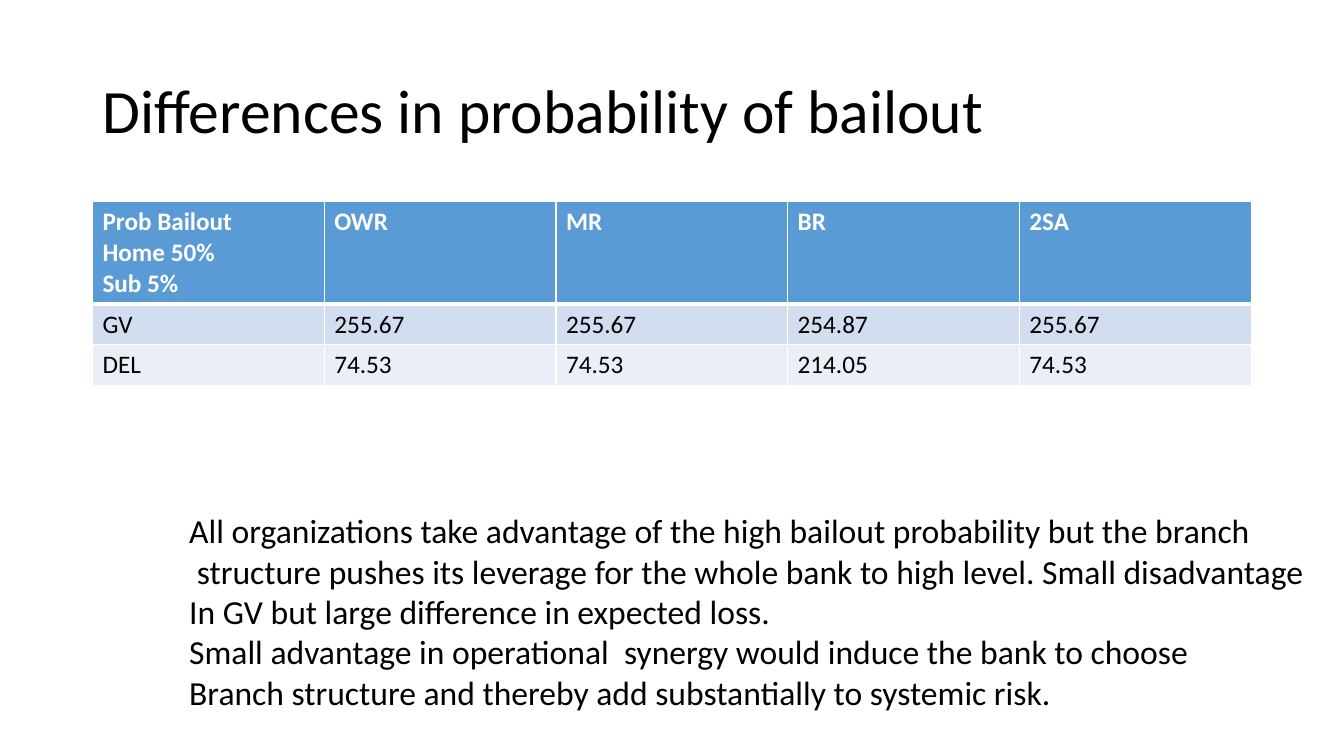
from dataclasses import dataclass

from pptx import Presentation
from pptx import util as u
from pptx.dml import color
from pptx.enum import text
from pptx.oxml import ns, xmlchemy


@dataclass(frozen=True)
class Theme:
    font: str = "Calibri"
    black: str = "000000"
    white: str = "FFFFFF"
    header: str = "5B9BD5"
    bands: tuple = ("D2DEEF", "EAEFF7")
    title_size: int = 44
    table_size: int = 18
    note_size: int = 24


theme = Theme()


def write_lines(tf, lines, size, rgb, bold=False):
    for i, line in enumerate(lines):
        p = tf.paragraphs[0] if i == 0 else tf.add_paragraph()
        p.alignment = text.PP_ALIGN.LEFT
        r = p.add_run()
        r.text = line
        r.font.name = theme.font
        r.font.size = u.Pt(size)
        r.font.bold = bold
        r.font.color.rgb = color.RGBColor.from_string(rgb)


def add_border(cell, side, width):
    tc_pr = cell._tc.get_or_add_tcPr()
    ln = xmlchemy.OxmlElement(f"a:ln{side}")
    ln.set("w", str(u.Pt(width)))
    fill = xmlchemy.OxmlElement("a:solidFill")
    rgb = xmlchemy.OxmlElement("a:srgbClr")
    rgb.set("val", theme.white)
    fill.append(rgb)
    ln.append(fill)
    tc_pr.append(ln)


prs = Presentation()
prs.slide_width, prs.slide_height = u.Cm(33.87), u.Cm(19.05)
s = prs.slides.add_slide(prs.slide_layouts[5])

title = s.shapes.title
title.left, title.top = u.Cm(2.33), u.Cm(1.01)
title.width, title.height = u.Cm(29.21), u.Cm(3.68)
tf = title.text_frame
tf.auto_size = text.MSO_AUTO_SIZE.NONE
tf.vertical_anchor = text.MSO_ANCHOR.MIDDLE
write_lines(tf, ["Differences in probability of bailout"], theme.title_size, theme.black)
tf.paragraphs[0].line_spacing = 0.9

rows = [
    ["Prob Bailout\nHome 50%\nSub 5%", "OWR", "MR", "BR", "2SA"],
    ["GV", "255.67", "255.67", "254.87", "255.67"],
    ["DEL", "74.53", "74.53", "214.05", "74.53"],
]
row_heights = [2.54, 1.03, 1.03]
row_fills = [theme.header, *theme.bands]

table = s.shapes.add_table(
    len(rows), len(rows[0]), u.Cm(2.33), u.Cm(5.08), u.Cm(29.21), u.Cm(sum(row_heights))
).table
for col in table.columns:
    col.width = u.Cm(5.84)
for i, values in enumerate(rows):
    table.rows[i].height = u.Cm(row_heights[i])
    is_header = i == 0
    for j, value in enumerate(values):
        cell = table.cell(i, j)
        for side in "LRTB":
            thick = (is_header and side == "B") or (i == 1 and side == "T")
            add_border(cell, side, 3 if thick else 1)
        cell.fill.solid()
        cell.fill.fore_color.rgb = color.RGBColor.from_string(row_fills[i])
        write_lines(
            cell.text_frame,
            value.split("\n"),
            theme.table_size,
            theme.white if is_header else theme.black,
            is_header,
        )

note = s.shapes.add_textbox(u.Cm(4.52), u.Cm(12.73), u.Cm(29.01), u.Cm(6.4))
note.text_frame.word_wrap = True
write_lines(
    note.text_frame,
    [
        "All organizations take advantage of the high bailout probability but the branch",
        " structure pushes its leverage for the whole bank to high level. Small disadvantage",
        "In GV but large difference in expected loss.",
        "Small advantage in operational  synergy would induce the bank to choose",
        "Branch structure and thereby add substantially to systemic risk.",
    ],
    theme.note_size,
    theme.black,
)

prs.save("out.pptx")
